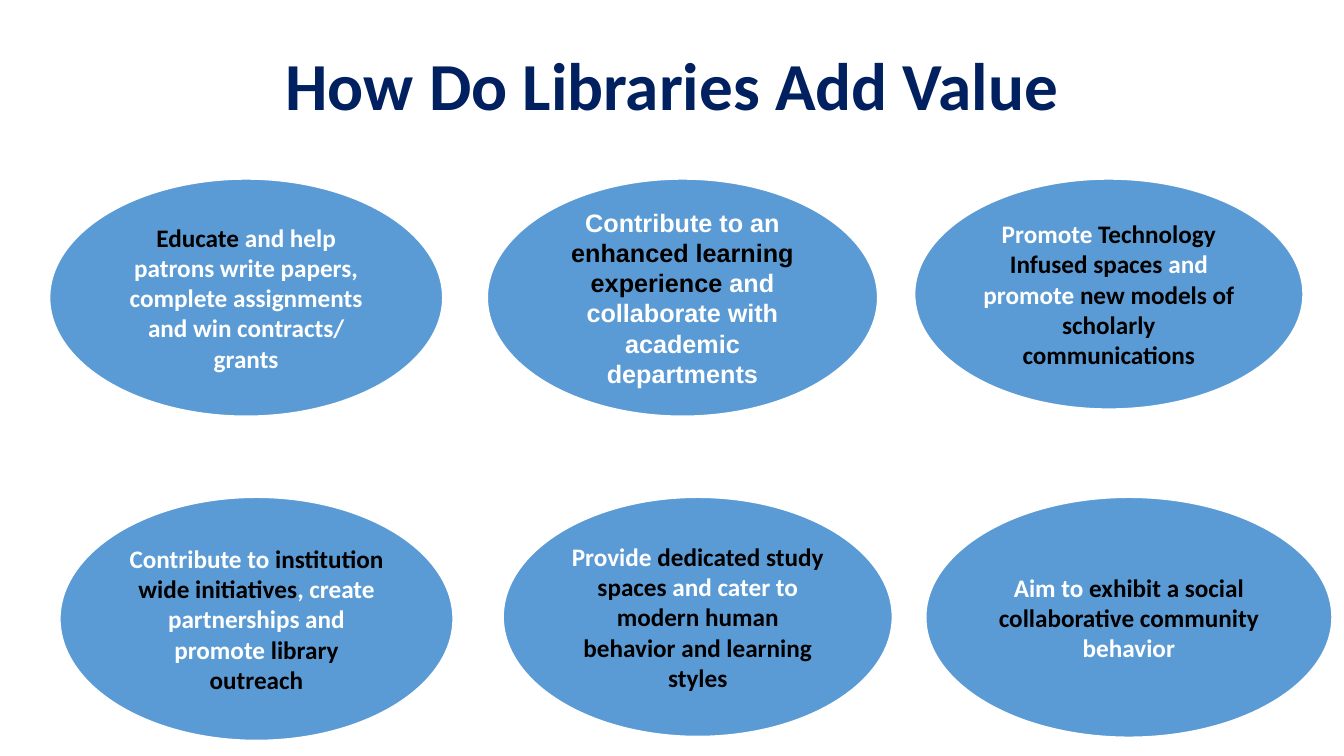
from pptx import Presentation
from pptx.dml.color import RGBColor
from pptx.enum import shapes, text
from pptx.util import Cm, Pt

NAVY = RGBColor(0x00, 0x20, 0x60)
BLUE = RGBColor(0x5B, 0x9B, 0xD5)
WHITE = RGBColor(0xFF, 0xFF, 0xFF)
BLACK = RGBColor(0x00, 0x00, 0x00)

# Each row: top, then (left, width, height, font, paragraphs); *stars* mark emphasis.
ROWS = [
    (4.45, [
        (1.19, 10.03, 6.1, "Calibri",
         ["*Educate *and help patrons write papers, complete assignments and win contracts/ grants"]),
        (12.22, 9.96, 6.1, "Arial",
         ["Contribute to an *enhanced learning experience *and collaborate with academic",
          "departments"]),
        (22.99, 9.91, 5.92, "Calibri",
         ["Promote *Technology Infused spaces *and promote "
          "*new models of scholarly communications*"]),
    ]),
    (12.47, [
        (1.45, 10.03, 6.25, "Calibri",
         ["Contribute to *institution wide initiatives*, create partnerships and promote "
          "*library outreach*"]),
        (12.62, 9.93, 6.15, "Calibri",
         ["Provide *dedicated study spaces *and cater to "
          "*modern human behavior and learning styles*"]),
        (23.27, 10.36, 6.17, "Calibri",
         ["Aim to *exhibit a social collaborative community *behavior"]),
    ]),
]


class SlideBuilder:
    title_format = {"name": "Calibri", "size": Pt(48), "bold": True}
    body_format = {"size": Pt(18), "bold": True}

    def __init__(self, presentation):
        self.slide = presentation.slides.add_slide(presentation.slide_layouts[5])

    def format_font(self, font, color, values):
        for name, value in values.items():
            setattr(font, name, value)
        font.color.rgb = color

    def title(self, words, left, top, width, height):
        shape = self.slide.shapes.title
        shape.left, shape.top, shape.width, shape.height = map(Cm, (left, top, width, height))
        frame = shape.text_frame
        frame.text = words
        frame.auto_size = text.MSO_AUTO_SIZE.NONE
        frame.vertical_anchor = text.MSO_ANCHOR.MIDDLE
        paragraph = frame.paragraphs[0]
        paragraph.alignment = text.PP_ALIGN.CENTER
        paragraph.line_spacing = 0.9
        self.format_font(paragraph.runs[0].font, NAVY, self.title_format)

    def ellipse(self, left, top, width, height, font_name, paragraphs):
        shape = self.slide.shapes.add_shape(
            shapes.MSO_SHAPE.OVAL, *map(Cm, (left, top, width, height)))
        shape.shadow.inherit = False
        shape.fill.solid()
        shape.fill.fore_color.rgb = BLUE
        shape.line.color.rgb = WHITE
        shape.line.width = Pt(4.5)
        frame = shape.text_frame
        frame.word_wrap = True
        frame.vertical_anchor = text.MSO_ANCHOR.MIDDLE
        for index, words in enumerate(paragraphs):
            paragraph = frame.add_paragraph() if index else frame.paragraphs[0]
            self.marked_text(paragraph, words, font_name)

    def marked_text(self, paragraph, words, font_name):
        """Write white text, with the parts between stars in black."""
        paragraph.alignment = text.PP_ALIGN.CENTER
        for index, part in enumerate(words.split("*")):
            if part:
                run = paragraph.add_run()
                run.text = part
                self.format_font(run.font, BLACK if index % 2 else WHITE,
                                 {"name": font_name, **self.body_format})


def main():
    presentation = Presentation()
    presentation.slide_width, presentation.slide_height = Cm(33.87), Cm(19.05)
    builder = SlideBuilder(presentation)
    builder.title("How Do Libraries Add Value", 2.34, 1.02, 29.21, 2.41)
    for top, ellipses in ROWS:
        for left, width, height, font_name, paragraphs in ellipses:
            builder.ellipse(left, top, width, height, font_name, paragraphs)
    presentation.save("out.pptx")


if __name__ == "__main__":
    main()
